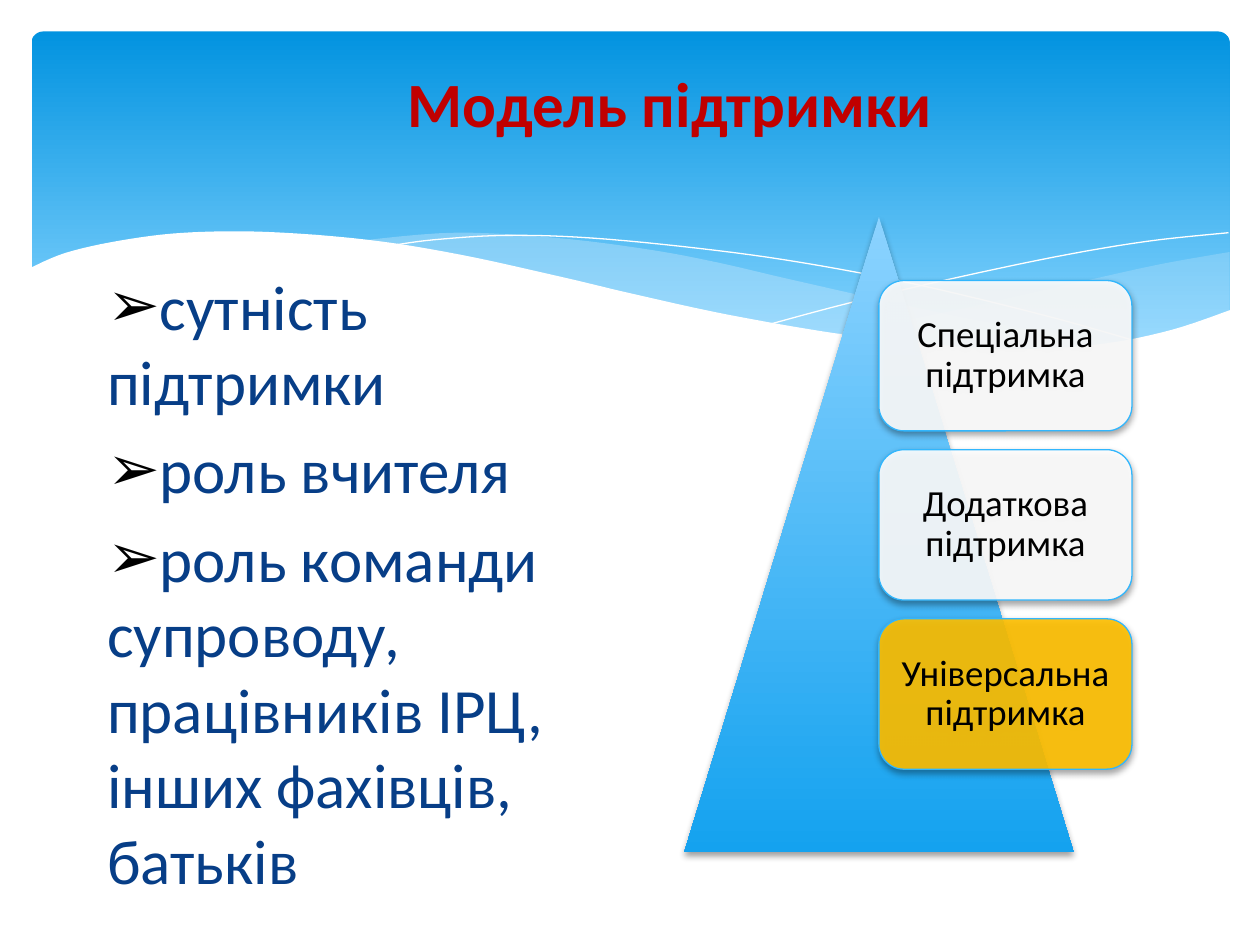
from lxml.etree import SubElement
from pptx import Presentation
from pptx.dml.color import RGBColor
from pptx.enum.shapes import MSO_SHAPE
from pptx.enum.text import MSO_ANCHOR, MSO_AUTO_SIZE, PP_ALIGN
from pptx.oxml.ns import qn
from pptx.util import Pt

COLORS = {
    "banner_top": "0293E0", "banner_bottom": "83D3FE", "wave": "C6E7FC",
    "white": "FFFFFF", "title": "C00000", "body": "073E87", "black": "000000",
    "pyramid_top": "8CD3FF", "pyramid_bottom": "14A2EF",
    "card_line": "31B6FD", "highlight": "FFC000",
}
FONT = "Calibri"

# Wave curves, in points from the corner of the wave band
RIGHT_WAVE = [
    [(684.7, 12), (645, 19), (602, 28.5), (543, 42), (490, 53), (458, 59)],
    [(458, 59), (500, 63.5), (536, 67), (568, 68), (603, 66), (634, 61.5),
     (660, 54.5), (684.7, 46)],
]
MIDDLE_WAVE = [
    [(625, 64.5), (563, 55), (515.5, 46), (435, 28), (392, 18), (352, 10.5),
     (300, 4), (242, 1), (188, 5.5)],
    [(188, 5.5), (243, 14), (305, 28), (389.5, 46.5), (450, 58), (502, 65),
     (547, 68), (585, 68), (625, 64.5)],
]
THIN_LINES = [
    [(204.5, 8.5), (230, 5), (271, 2.5), (320, 4), (382, 10), (440, 18),
     (505.5, 30.5), (580, 48.5), (635, 64)],
    [(423, 53), (466, 41.5), (520.5, 28.5), (584, 15), (637, 6), (684, 1)],
]
WHITE_WAVE = [
    [(685.5, 45), (651.5, 56.5), (612, 64.5), (564.5, 67.5), (517.5, 65),
     (463, 59), (399, 48), (344, 36), (304, 26.5), (245, 13.5), (192, 5),
     (134, 0.5), (87, 1), (50.5, 5.5), (19.5, 12.5), (-1.5, 21.5)],
    [(-1.5, 105), (685.5, 105)],
]


def rgb(name):
    return RGBColor.from_string(COLORS[name])


def place(shape, box):
    shape.left, shape.top, shape.width, shape.height = map(Pt, box)


def set_solid(shape, name, opacity=100):
    shape.fill.solid()
    shape.fill.fore_color.rgb = rgb(name)
    if opacity < 100:
        color = shape.fill._xPr.find(qn("a:solidFill"))[0]
        SubElement(color, qn("a:alpha"), val=str(opacity * 1000))


def set_gradient(shape, top, bottom, end=1.0):
    shape.fill.gradient()
    shape.fill.gradient_angle = 270
    for stop, name, position in zip(shape.fill.gradient_stops, (top, bottom), (0, end)):
        stop.color.rgb = rgb(name)
        stop.position = position


def add_soft_shadow(shape):
    shape.shadow.inherit = False
    effects = shape._element.spPr.find(qn("a:effectLst"))
    shadow = SubElement(effects, qn("a:outerShdw"), blurRad=str(Pt(4)),
                        dist=str(Pt(2)), dir="5400000", rotWithShape="0")
    color = SubElement(shadow, qn("a:srgbClr"), val=COLORS["black"])
    SubElement(color, qn("a:alpha"), val="38000")


def smooth(points, steps=6):
    """Catmull-Rom curve through the points."""
    if len(points) < 3:
        return points
    padded = [points[0], *points, points[-1]]
    curve = [points[0]]
    for a, b, c, d in zip(padded, padded[1:], padded[2:], padded[3:]):
        for step in range(1, steps + 1):
            t = step / steps
            curve.append(tuple(
                (2 * q + (r - p) * t + (2 * p - 5 * q + 4 * r - s) * t ** 2
                 + (3 * q - p - 3 * r + s) * t ** 3) / 2
                for p, q, r, s in zip(a, b, c, d)))
    return curve


def add_curve(page, origin, parts, close=True):
    left, top = origin
    points = [(Pt(left + x), Pt(top + y)) for part in parts for x, y in smooth(part)]
    builder = page.shapes.build_freeform(*points[0])
    builder.add_line_segments(points[1:], close=close)
    shape = builder.convert_to_shape()
    shape.shadow.inherit = False
    return shape


def add_banner(page, box):
    left, top, width, height = box
    panel = page.shapes.add_shape(MSO_SHAPE.ROUNDED_RECTANGLE, *map(Pt, box))
    panel.adjustments[0] = 0.034
    panel.shadow.inherit = False
    set_gradient(panel, "banner_top", "banner_bottom", 0.9)
    panel.line.fill.background()

    # Waves over the lower part of the panel
    origin = (left, top + 114)
    for parts, opacity in ((RIGHT_WAVE, 29), (MIDDLE_WAVE, 40)):
        wave = add_curve(page, origin, parts)
        set_solid(wave, "wave", opacity)
        wave.line.fill.background()
    for points in THIN_LINES:
        line = add_curve(page, origin, [points], close=False)
        line.fill.background()
        line.line.color.rgb = rgb("white")
        line.line.width = Pt(0)
    ground = add_curve(page, origin, WHITE_WAVE)
    set_solid(ground, "white")
    ground.line.fill.background()


def style_font(para, size, color, bold=False):
    para.font.name, para.font.size, para.font.bold = FONT, Pt(size), bold
    para.font.color.rgb = rgb(color)


def fill_title(page, box, text):
    title = page.shapes.title
    page.shapes._spTree.append(title._element)  # in front of the banner
    place(title, box)
    frame = title.text_frame
    frame.text = text
    frame.auto_size = MSO_AUTO_SIZE.NONE
    frame.vertical_anchor = MSO_ANCHOR.MIDDLE
    frame.paragraphs[0].alignment = PP_ALIGN.CENTER
    style_font(frame.paragraphs[0], 36, "title", bold=True)


def fill_list(page, box, items):
    body = page.placeholders[1]
    page.shapes._spTree.append(body._element)
    place(body, box)
    frame = body.text_frame
    frame.text = "\n".join(items)
    frame.auto_size = MSO_AUTO_SIZE.NONE
    for para in frame.paragraphs:
        style_font(para, 36, "body")
        para.space_before = Pt(7.2)
        properties = para._p.get_or_add_pPr()
        properties.set("marL", "0")
        properties.set("indent", "0")
        bullet_color = SubElement(properties, qn("a:buClr"))
        SubElement(bullet_color, qn("a:srgbClr"), val=COLORS["black"])
        SubElement(properties, qn("a:buChar"), char="➢")
        # Default run properties come last in the schema order
        properties.append(properties.find(qn("a:defRPr")))


def add_card(page, box, text, color):
    card = page.shapes.add_shape(MSO_SHAPE.ROUNDED_RECTANGLE, *map(Pt, box))
    set_solid(card, color, 90)
    card.line.color.rgb = rgb("card_line")
    card.line.width = Pt(0.75)
    add_soft_shadow(card)
    frame = card.text_frame
    frame.word_wrap = True
    frame.margin_left = frame.margin_right = Pt(5)  # room for the longest word
    frame.vertical_anchor = MSO_ANCHOR.MIDDLE
    frame.text = text
    para = frame.paragraphs[0]
    para.alignment = PP_ALIGN.CENTER
    para.line_spacing = 0.9
    style_font(para, 21, "black")


def add_pyramid(page, box, cards):
    left, top, width, height = box
    triangle = page.shapes.add_shape(MSO_SHAPE.ISOSCELES_TRIANGLE, *map(Pt, box))
    set_gradient(triangle, "pyramid_top", "pyramid_bottom")
    triangle.line.fill.background()
    add_soft_shadow(triangle)

    # Cards run down from the axis, with gaps of an eighth of their height
    card_height = height * 0.2367
    for index, (text, color) in enumerate(cards):
        card_top = top + height * 0.1 + index * card_height * 1.125
        add_card(page, (left + width / 2, card_top, width * 0.65, card_height), text, color)


def main():
    deck = Presentation()
    deck.slide_width, deck.slide_height = Pt(720), Pt(540)
    page = deck.slides.add_slide(deck.slide_layouts[1])
    add_banner(page, (18, 18, 684.7, 194.4))
    fill_title(page, (180, 12.25, 405.4, 92.2), "Модель підтримки")
    fill_list(page, (54, 149, 306, 342.7), [
        "сутність підтримки",
        "роль вчителя",
        "роль команди супроводу, працівників ІРЦ, інших фахівців, батьків",
    ])
    add_pyramid(page, (391, 124, 222.5, 363), [
        ("Спеціальна підтримка", "white"),
        ("Додаткова підтримка", "white"),
        ("Універсальна підтримка", "highlight"),
    ])
    deck.save("out.pptx")


if __name__ == "__main__":
    main()
